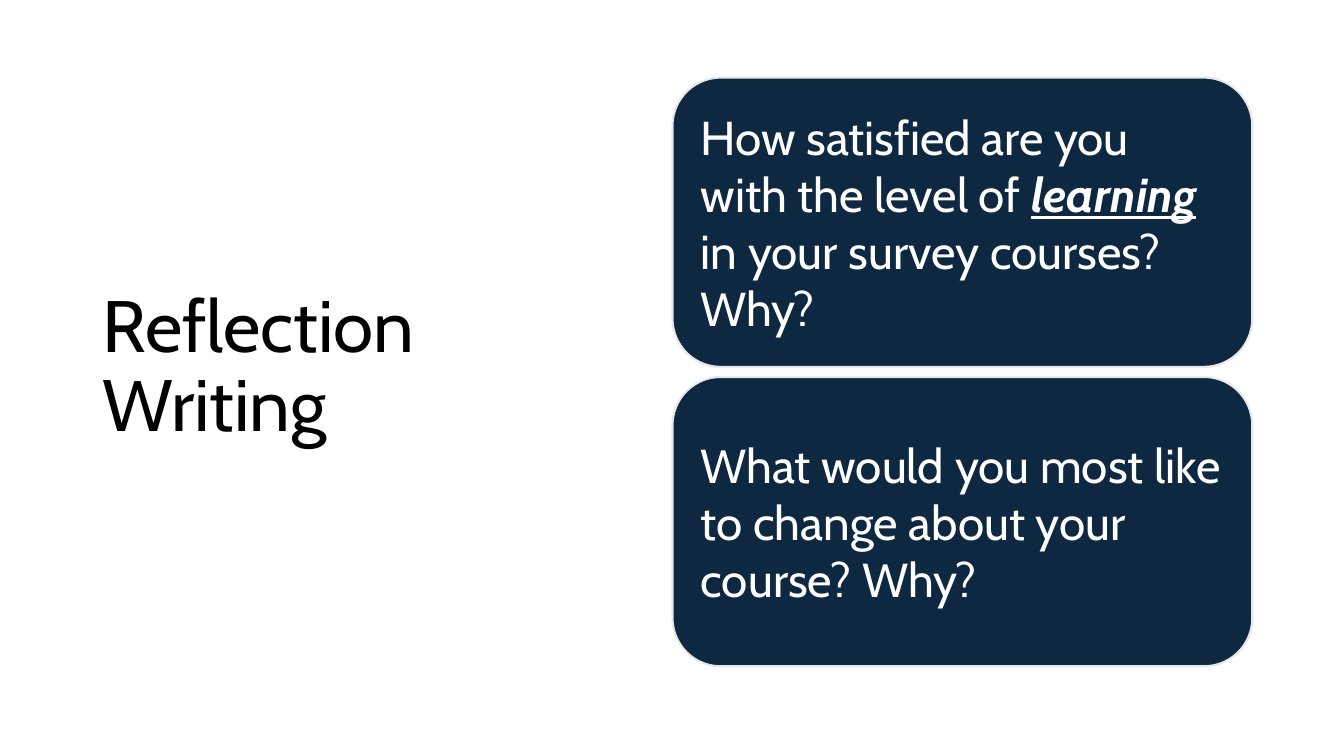
from dataclasses import dataclass

from pptx import Presentation
from pptx.dml.color import RGBColor
from pptx.enum.shapes import MSO_SHAPE
from pptx.enum.text import MSO_ANCHOR, PP_ALIGN
from pptx.slide import Slide
from pptx.util import Inches, Pt

NAVY = RGBColor(0x0E, 0x28, 0x41)
LIGHT_GRAY = RGBColor(0xE8, 0xE8, 0xE8)
WHITE = RGBColor(0xFF, 0xFF, 0xFF)
BLACK = RGBColor(0x00, 0x00, 0x00)
FONT_NAME = "Cabin"

CARD_LEFT = 6.67
CARD_TOP = 0.77
CARD_WIDTH = 5.75
CARD_HEIGHT = 2.87
CARD_GAP = 0.1
CARD_MARGIN = Inches(0.14)


@dataclass(frozen=True)
class Question:
    text: str
    emphasis: str = ""
    ending: str = ""


QUESTIONS = [
    Question(
        "How satisfied are you with the level of ",
        "learning",
        " in your survey courses? Why?",
    ),
    Question("What would you most like to change about your course? Why?"),
]


def add_title(slide: Slide, text: str) -> None:
    title = slide.shapes.title
    title.left, title.top = Inches(0.92), Inches(0.61)
    title.width, title.height = Inches(5.32), Inches(6.09)
    title.text_frame.text = text
    title.text_frame.word_wrap = True
    title.text_frame.vertical_anchor = MSO_ANCHOR.MIDDLE
    paragraph = title.text_frame.paragraphs[0]
    paragraph.alignment = PP_ALIGN.LEFT
    paragraph.line_spacing = 0.9
    paragraph.font.name = FONT_NAME
    paragraph.font.size = Pt(52)
    paragraph.font.color.rgb = BLACK


def add_question_card(slide: Slide, question: Question, top: float) -> None:
    card = slide.shapes.add_shape(
        MSO_SHAPE.ROUNDED_RECTANGLE,
        Inches(CARD_LEFT), Inches(top), Inches(CARD_WIDTH), Inches(CARD_HEIGHT),
    )
    card.shadow.inherit = False
    card.fill.solid()
    card.fill.fore_color.rgb = NAVY
    card.line.color.rgb = LIGHT_GRAY
    card.line.width = Pt(1.5)

    frame = card.text_frame
    frame.word_wrap = True
    frame.vertical_anchor = MSO_ANCHOR.MIDDLE
    frame.margin_left = frame.margin_right = CARD_MARGIN
    frame.margin_top = frame.margin_bottom = CARD_MARGIN

    paragraph = frame.paragraphs[0]
    paragraph.alignment = PP_ALIGN.LEFT
    paragraph.font.name = FONT_NAME
    paragraph.font.size = Pt(34)
    paragraph.font.color.rgb = WHITE
    paragraph.add_run().text = question.text
    if question.emphasis:
        emphasis = paragraph.add_run()
        emphasis.text = question.emphasis
        emphasis.font.bold = True
        emphasis.font.italic = True
        emphasis.font.underline = True
    if question.ending:
        paragraph.add_run().text = question.ending


def main() -> None:
    presentation = Presentation()
    presentation.slide_width = Inches(13.33)
    presentation.slide_height = Inches(7.5)
    slide = presentation.slides.add_slide(presentation.slide_layouts[5])

    add_title(slide, "Reflection Writing")
    for index, question in enumerate(QUESTIONS):
        add_question_card(slide, question, CARD_TOP + index * (CARD_HEIGHT + CARD_GAP))

    presentation.save("out.pptx")


if __name__ == "__main__":
    main()
